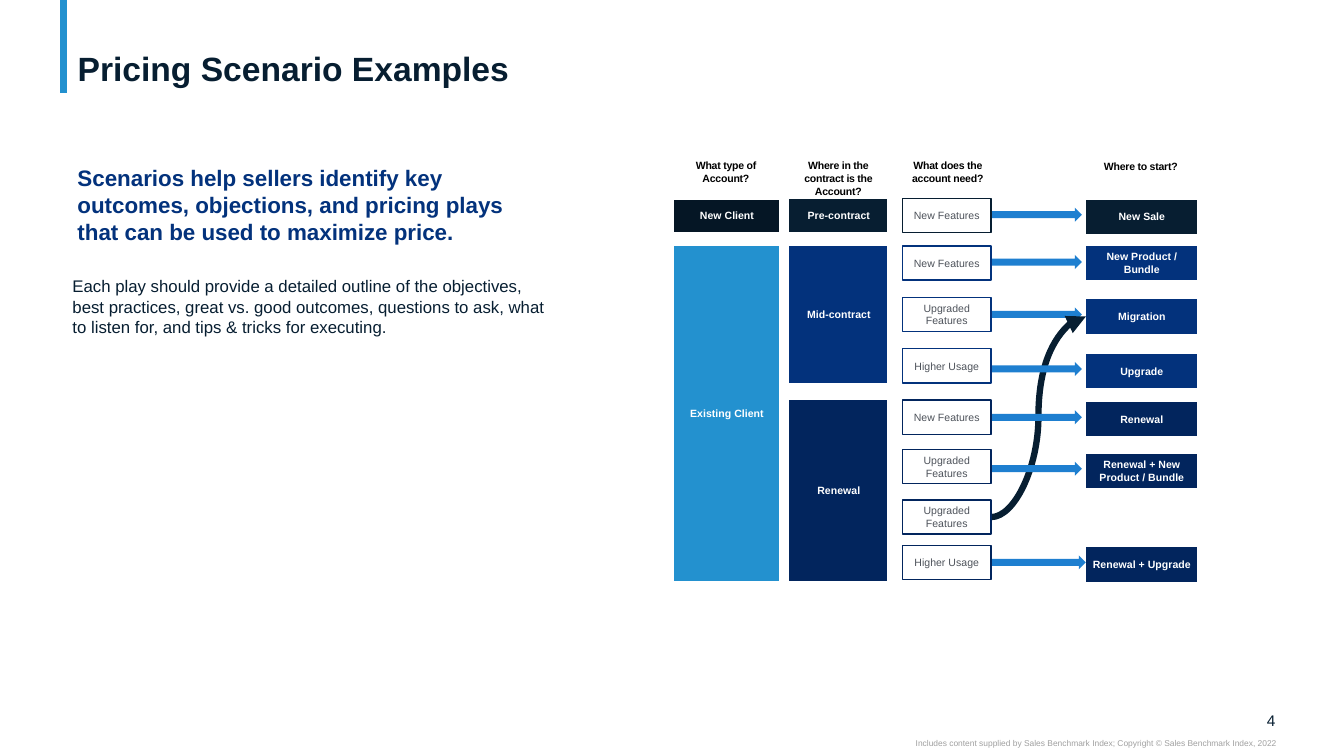
from dataclasses import dataclass

from lxml import etree
from pptx import Presentation
from pptx.dml.color import RGBColor
from pptx.enum import shapes, text
from pptx.oxml import ns
from pptx.util import Inches, Pt


@dataclass(frozen=True)
class Theme:
    font: str = "Arial"
    ink: str = "071E31"
    ink_dark: str = "051625"
    royal: str = "03327C"
    navy: str = "02255D"
    sky: str = "2391CF"
    arrow: str = "1E7FD0"
    need_text: str = "4D525A"
    credit: str = "A0A0A0"
    black: str = "000000"
    white: str = "FFFFFF"
    title_size: float = 24
    lead_size: float = 16
    body_size: float = 12
    number_size: float = 11
    chart_size: float = 7.5
    credit_size: float = 6


T = Theme()
PROCESS = shapes.MSO_SHAPE.FLOWCHART_PROCESS
LEFT, CENTER, RIGHT = text.PP_ALIGN.LEFT, text.PP_ALIGN.CENTER, text.PP_ALIGN.RIGHT
TOP, MIDDLE, BOTTOM = text.MSO_ANCHOR.TOP, text.MSO_ANCHOR.MIDDLE, text.MSO_ANCHOR.BOTTOM
TEXT_INSETS = (0.1, 0.05, 0.1, 0.05)
BOX_INSETS = (0.02, 0.02, 0.01, 0.02)
NO_INSETS = (0, 0, 0, 0)

# Column positions: left, width
ACCOUNT, CONTRACT, NEED, START = (6.68, 1.05), (7.83, 0.97), (8.95, 0.88), (10.77, 1.1)
BOX_HEIGHT = 0.34
ARROW_LEFT = 9.71

HEADINGS = [
    ("What type of Account?", 6.67, 1.58, 1.06),
    ("Where in the contract is the Account?", 7.83, 1.58, 0.97),
    ("What does the account need?", 8.95, 1.58, 0.9),
    ("Where to start?", 10.76, 1.59, 1.11),
]
STAGES = [  # label, column, top, height, colour
    ("New Client", ACCOUNT, 1.98, 0.32, T.ink_dark),
    ("Existing Client", ACCOUNT, 2.44, 3.32, T.sky),
    ("Pre-contract", CONTRACT, 1.97, 0.33, T.ink),
    ("Mid-contract", CONTRACT, 2.44, 1.36, T.royal),
    ("Renewal", CONTRACT, 3.97, 1.79, T.navy),
]
NEEDS = [  # label, top, outline
    ("New Features", 1.97, T.ink),
    ("New Features", 2.44, T.royal),
    ("Upgraded Features", 2.95, T.royal),
    ("Higher Usage", 3.46, T.royal),
    ("New Features", 3.97, T.navy),
    ("Upgraded Features", 4.46, T.navy),
    ("Upgraded Features", 4.96, T.navy),
    ("Higher Usage", 5.41, T.navy),
]
STARTS = [  # label, top, colour
    ("New Sale", 1.98, T.ink),
    ("New Product / Bundle", 2.44, T.royal),
    ("Migration", 2.97, T.royal),
    ("Upgrade", 3.51, T.royal),
    ("Renewal", 3.99, T.navy),
    ("Renewal + New Product / Bundle", 4.5, T.navy),
    ("Renewal + Upgrade", 5.43, T.navy),
]
ARROWS_BELOW = [(2.06, 1.02), (2.53, 1.02), (3.05, 1.02), (5.51, 1.06)]  # top, width
ARROWS_ABOVE = [(3.59, 1.02), (4.07, 1.02), (4.58, 1.02)]
MIGRATION, RENEWAL_UPGRADED = 2, 6


def apply(target, values):
    for name, value in values.items():
        setattr(target, name, value)


def inches(*lengths):
    return [Inches(length) for length in lengths]


def write(shape, words, size, color, bold=False, align=LEFT, anchor=TOP,
          insets=TEXT_INSETS, line_spacing=None, tracking=None):
    frame = shape.text_frame
    sides = ("margin_left", "margin_top", "margin_right", "margin_bottom")
    apply(frame, dict(zip(sides, inches(*insets))))
    apply(frame, {"word_wrap": True, "auto_size": text.MSO_AUTO_SIZE.NONE,
                  "vertical_anchor": anchor})
    paragraph = frame.paragraphs[0]
    apply(paragraph, {"alignment": align, "line_spacing": line_spacing})
    run = paragraph.add_run()
    run.text = words
    apply(run.font, {"name": T.font, "size": Pt(size), "bold": bold})
    run.font.color.rgb = RGBColor.from_string(color)
    if tracking:
        run.font.language_id = None
        run._r.get_or_add_rPr().set("spc", str(round(tracking * 100)))


def add_text(slide, place, words, size, color, **style):
    write(slide.shapes.add_textbox(*inches(*place)), words, size, color, **style)


def add_block(slide, kind, place, fill, outline=None):
    block = slide.shapes.add_shape(kind, *inches(*place))
    block.shadow.inherit = False
    block.fill.solid()
    block.fill.fore_color.rgb = RGBColor.from_string(fill)
    if outline:
        block.line.color.rgb = RGBColor.from_string(outline)
        block.line.width = Pt(1)
    else:
        block.line.fill.background()
    return block


def add_stage(slide, label, column, top, height, fill):
    stage = add_block(slide, PROCESS, (column[0], top, column[1], height), fill)
    write(stage, label, T.chart_size, T.white, bold=True, align=CENTER,
          anchor=MIDDLE, insets=BOX_INSETS)
    return stage


def add_need(slide, label, top, outline):
    need = add_block(slide, shapes.MSO_SHAPE.RECTANGLE,
                     (NEED[0], top, NEED[1], BOX_HEIGHT), T.white, outline)
    write(need, label, T.chart_size, T.need_text, align=CENTER, anchor=MIDDLE)
    return need


def add_arrows(slide, arrows):
    for top, width in arrows:
        add_block(slide, shapes.MSO_SHAPE.RIGHT_ARROW, (ARROW_LEFT, top, width, 0.14), T.arrow)


def add_line(slide, kind, ends, color, width, arrowhead=False):
    line = slide.shapes.add_connector(kind, *inches(*ends))
    line.line.color.rgb = RGBColor.from_string(color)
    line.line.width = Pt(width)
    if arrowhead:
        etree.SubElement(line.line._get_or_add_ln(), ns.qn("a:tailEnd"), type="triangle")
    etree.SubElement(line._element.spPr, ns.qn("a:effectLst"))
    return line


def add_page_frame(slide):
    add_line(slide, shapes.MSO_CONNECTOR.STRAIGHT, (0.63, 0, 0.63, 0.92), T.sky, 5)
    add_text(slide, (12.32, 7.05, 0.33, 0.19), "4", T.number_size, T.ink,
             align=RIGHT, anchor=MIDDLE, insets=NO_INSETS)
    add_text(slide, (7.5, 7.32, 5.16, 0.1),
             "Includes content supplied by Sales Benchmark Index; "
             "Copyright © Sales Benchmark Index, 2022",
             T.credit_size, T.credit, align=RIGHT, insets=NO_INSETS)


def add_message(slide):
    title = slide.shapes.title
    apply(title, dict(zip(("left", "top", "width", "height"), inches(0.67, 0.04, 11.99, 0.84))))
    write(title, "Pricing Scenario Examples", T.title_size, T.ink, bold=True,
          anchor=BOTTOM, insets=(0.1, 0, 0.1, 0), line_spacing=0.9)
    add_text(slide, (0.67, 1.58, 4.82, 1.33),
             "Scenarios help sellers identify key outcomes, objections, and pricing plays "
             "that can be used to maximize price.", T.lead_size, T.royal, bold=True)
    add_text(slide, (0.62, 2.69, 4.91, 0.71),
             "Each play should provide a detailed outline of the objectives, best practices, "
             "great vs. good outcomes, questions to ask, what to listen for, and tips & tricks "
             "for executing.", T.body_size, T.ink)


def add_scenario_map(slide):
    for question, left, top, width in HEADINGS:
        add_text(slide, (left, top, width, 0.18), question, T.chart_size, T.black,
                 bold=True, align=CENTER, insets=NO_INSETS, tracking=-0.2)
    for stage in STAGES:
        add_stage(slide, *stage)
    starts = [add_stage(slide, label, START, top, BOX_HEIGHT, fill)
              for label, top, fill in STARTS]

    # Arrows lie beneath the need boxes, some of them over the curve
    add_arrows(slide, ARROWS_BELOW)
    migration_path = add_line(slide, shapes.MSO_CONNECTOR.CURVE,
                              (9.84, 5.13, 10.77, 3.14), T.ink, 4.5, arrowhead=True)
    add_arrows(slide, ARROWS_ABOVE)
    needs = [add_need(slide, *need) for need in NEEDS]
    migration_path.begin_connect(needs[RENEWAL_UPGRADED], 3)
    migration_path.end_connect(starts[MIGRATION], 1)


def main():
    deck = Presentation()
    apply(deck, {"slide_width": Inches(13.33), "slide_height": Inches(7.5)})
    slide = deck.slides.add_slide(deck.slide_layouts[5])
    add_page_frame(slide)
    add_message(slide)
    add_scenario_map(slide)
    deck.save("out.pptx")


if __name__ == "__main__":
    main()
